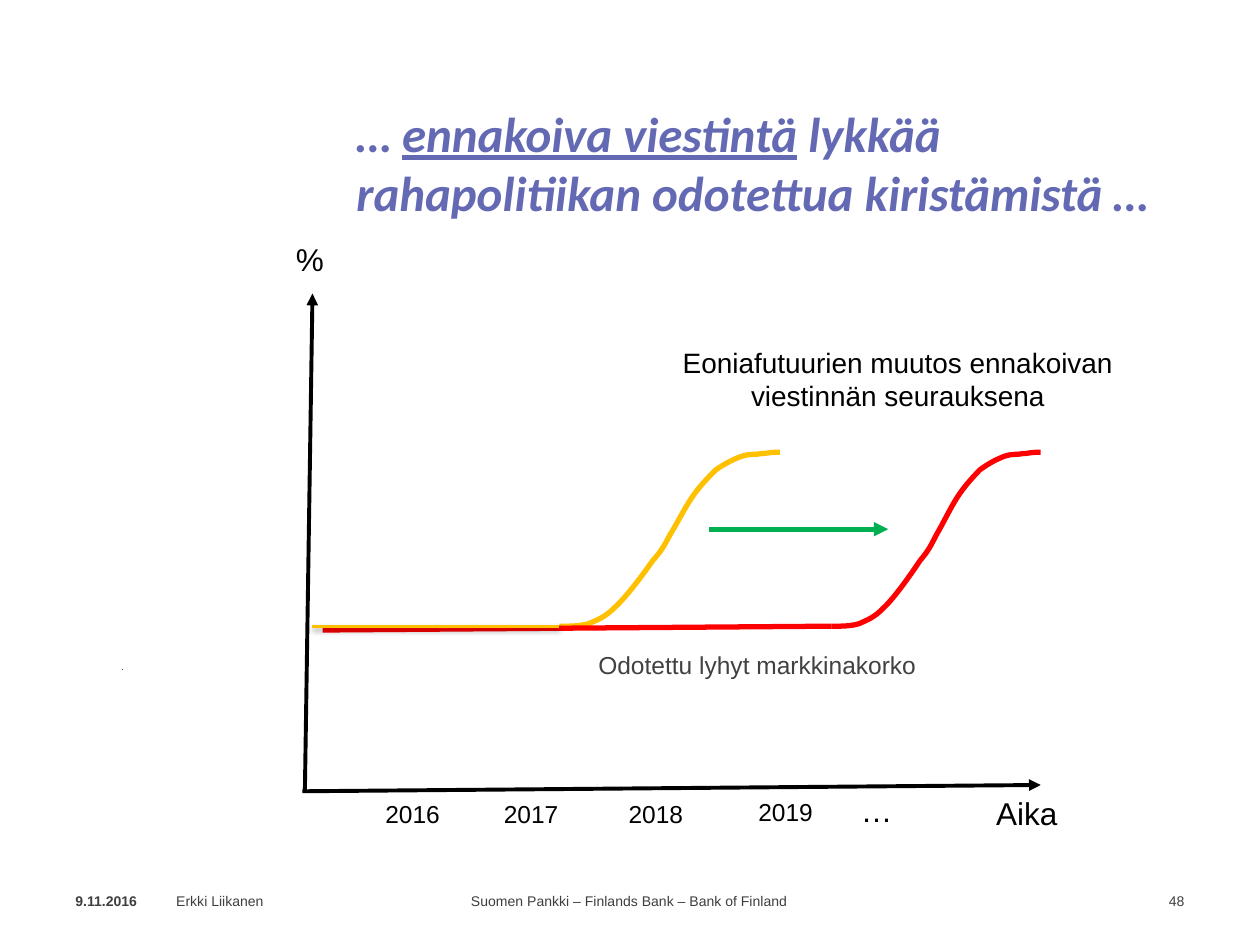
from lxml.etree import SubElement
from pptx import Presentation
from pptx.dml.color import RGBColor
from pptx.enum.shapes import MSO_CONNECTOR
from pptx.enum.text import MSO_ANCHOR, MSO_AUTO_SIZE, PP_ALIGN
from pptx.oxml.ns import qn
from pptx.util import Inches, Pt

LEFT, CENTER, RIGHT = PP_ALIGN.LEFT, PP_ALIGN.CENTER, PP_ALIGN.RIGHT
BLACK, GREY, FOOTER = "000000", "414042", "3F3E3E"
VIOLET, YELLOW, RED, GREEN = "6469B3", "FFC000", "FF0000", "00B050"

# Rate rise as Bezier points: inches right of and above its starting point
RISE = [(0, 0), (.08, 0), (.16, 0), (.23, .02), (.3, .05), (.36, .07), (.44, .15),
        (.53, .23), (.67, .42), (.74, .52), (.82, .61), (.83, .64), (.88, .73),
        (.93, .81), (.99, .93), (1.05, 1.02), (1.11, 1.11), (1.18, 1.18),
        (1.24, 1.24), (1.31, 1.29), (1.39, 1.33), (1.45, 1.35), (1.51, 1.37),
        (1.56, 1.36), (1.6, 1.37), (1.64, 1.37), (1.67, 1.38), (1.7, 1.38),
        (1.72, 1.38), (1.74, 1.38), (1.75, 1.38)]


def rgb(value):
    return RGBColor.from_string(value)


def lines_to_curves(sp):
    """Turn every three line segments of a freeform into one cubic Bezier."""
    outline = next(sp.element.iter(qn("a:path")))
    segments = outline.findall(qn("a:lnTo"))
    for i in range(0, len(segments), 3):
        curve = SubElement(outline, qn("a:cubicBezTo"))
        for segment in segments[i:i + 3]:
            curve.append(segment[0])
            outline.remove(segment)


class SlideBuilder:
    """Holds the text style and the current slide."""
    font = "Arial"

    def __init__(self, slide):
        self.s = slide

    def text(self, box, text, size, color=BLACK, align=LEFT, wrap=True):
        tf = self.s.shapes.add_textbox(*map(Inches, box)).text_frame
        tf.word_wrap = wrap
        tf.auto_size = MSO_AUTO_SIZE.SHAPE_TO_FIT_TEXT
        p = tf.paragraphs[0]
        p.text = text
        p.alignment = align
        for r in p.runs:
            self.style(r, size, color)
        return tf

    def style(self, r, size, color):
        r.font.name = self.font
        r.font.size = Pt(size)
        r.font.color.rgb = rgb(color)

    def title(self, box, parts):
        """Write (text, underlined) parts as one bold italic title."""
        p = self.text(box, "", 28).paragraphs[0]
        for text, underlined in parts:
            r = p.add_run()
            r.text = text
            self.style(r, 28, VIOLET)
            r.font.name = "Calibri"
            r.font.bold = r.font.italic = True
            r.font.underline = underlined

    def footer(self, left, width, text, align=LEFT, bold=False):
        tf = self.text((left, 6.95, width, .4), text, 8, FOOTER, align)
        tf.auto_size = MSO_AUTO_SIZE.NONE
        tf.vertical_anchor = MSO_ANCHOR.MIDDLE
        tf.paragraphs[0].runs[0].font.bold = bold

    def line(self, start, end, color, width, arrow=False, shadow=False):
        c = self.s.shapes.add_connector(MSO_CONNECTOR.STRAIGHT,
                                        *map(Inches, start + end))
        c.line.color.rgb = rgb(color)
        c.line.width = Pt(width)
        sp_pr = c.element.spPr
        if arrow:
            SubElement(sp_pr.find(qn("a:ln")), qn("a:tailEnd"), type="triangle")
        effects = SubElement(sp_pr, qn("a:effectLst"))
        if shadow:
            outer = SubElement(effects, qn("a:outerShdw"), blurRad=str(Pt(3.1)),
                               dist=str(Pt(1.8)), dir="5400000", rotWithShape="0")
            black = SubElement(outer, qn("a:srgbClr"), val=BLACK)
            SubElement(black, qn("a:alpha"), val="35000")

    def rise(self, left, base, width, color):
        """Draw the rate rise, stretched to the given width."""
        scale = width / RISE[-1][0]
        points = [(Inches(left + x * scale), Inches(base - y)) for x, y in RISE]
        builder = self.s.shapes.build_freeform(*points[0])
        builder.add_line_segments(points[1:], close=False)
        sp = builder.convert_to_shape()
        lines_to_curves(sp)
        sp.shadow.inherit = False
        sp.fill.background()
        sp.line.color.rgb = rgb(color)
        sp.line.width = Pt(3)


def main():
    prs = Presentation()
    prs.slide_width, prs.slide_height = Inches(10), Inches(7.5)
    b = SlideBuilder(prs.slides.add_slide(prs.slide_layouts[6]))

    b.footer(3.53, 2.93, "Suomen Pankki – Finlands Bank – Bank of Finland", CENTER)
    b.line((.97, 5.32), (.97, 5.31), "4D529C", .75)

    for year, left, top, width in ((2016, 2.96, 6.29, .64), (2017, 3.9, 6.29, .71),
                                   (2018, 4.89, 6.29, .64), (2019, 5.92, 6.28, .66)):
        b.text((left, top, width, .34), str(year), 14, wrap=False)
    b.text((6.72, 6.23, .46, .4), "…", 18, align=RIGHT)
    b.text((7.8, 6.25, .69, .4), "Aika", 18, align=RIGHT, wrap=False)

    b.rise(4.44, 4.97, 1.75, YELLOW)
    b.line((6.6, 4.97), (2.56, 5), RED, 3)
    b.title((2.73, .77, 6.77, 1.51),
            (("… ", False), ("ennakoiva viestintä", True),
             (" lykkää rahapolitiikan odotettua kiristämistä …", False)))
    b.line((2.48, 4.97), (4.44, 4.97), YELLOW, 1.75, shadow=True)
    b.rise(6.6, 4.97, 1.66, RED)

    b.line((2.42, 6.28), (2.48, 2.33), BLACK, 2.25, arrow=True)
    b.line((2.4, 6.28), (8.26, 6.23), BLACK, 2.25, arrow=True)
    b.text((2.24, 1.86, .43, .4), "%", 18, align=RIGHT, wrap=False)
    b.text((5.07, 2.69, 4.11, .64),
           "Eoniafutuurien muutos ennakoivan viestinnän seurauksena", 16, align=CENTER)
    b.line((5.63, 4.2), (7.05, 4.2), GREEN, 2.75, arrow=True)
    b.text((4.65, 5.11, 2.74, .34), "Odotettu lyhyt markkinakorko", 14, GREY, wrap=False)

    b.footer(8.93, .57, "48", RIGHT)
    b.footer(.5, .8, "9.11.2016", bold=True)
    b.footer(1.3, 2.11, "Erkki Liikanen")
    prs.save("out.pptx")


if __name__ == "__main__":
    main()
